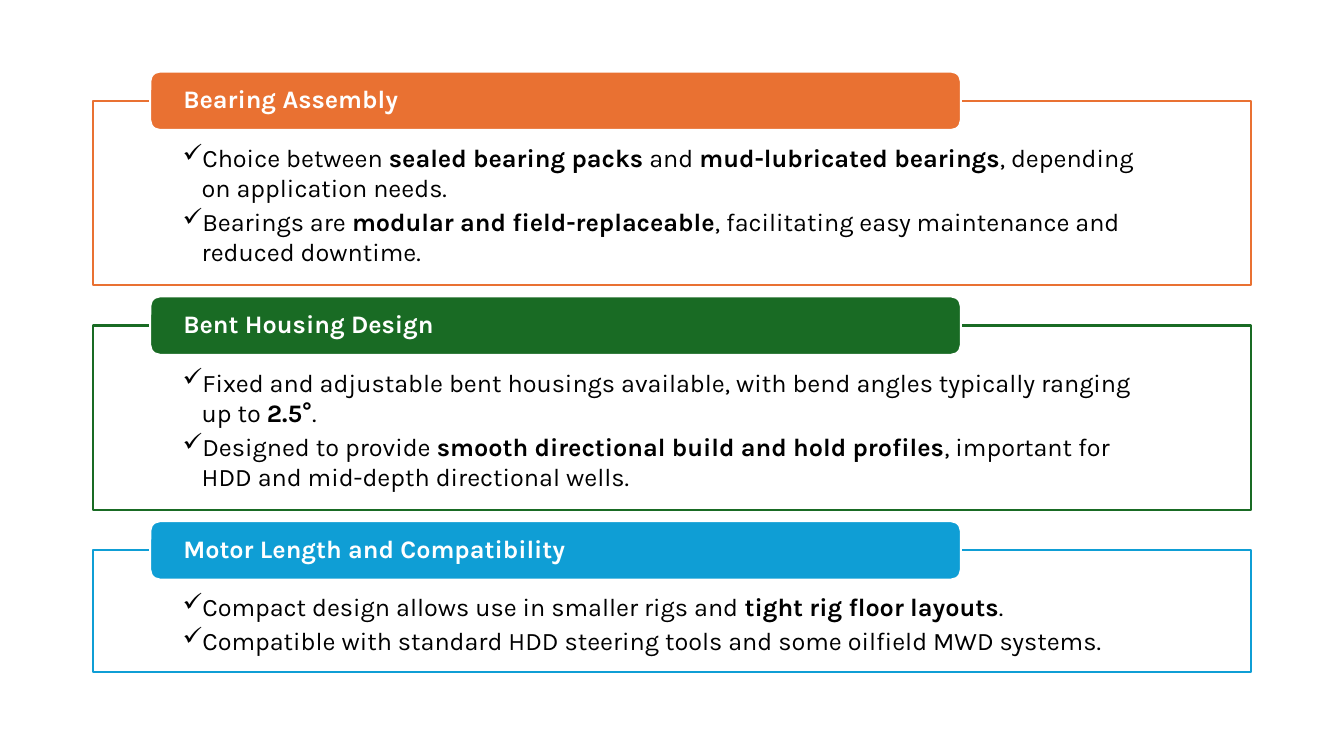
from pptx import Presentation
from pptx.dml.color import RGBColor as Rgb
from pptx.enum.shapes import MSO_SHAPE as Shape
from pptx.enum.text import MSO_ANCHOR as Anchor, PP_ALIGN as Align
from pptx.oxml.ns import qn
from pptx.util import Inches, Pt
from lxml.etree import SubElement as Sub

COLORS = {
    "white": "FFFFFF",
    "black": "000000",
    "orange": "E97132",
    "green": "196B24",
    "blue": "0F9ED5",
}

PANELS = [
    ("Bearing Assembly", "orange", 1.83, [
        "Choice between *sealed bearing packs* and *mud-lubricated bearings*, "
        "depending on application needs.",
        "Bearings are *modular and field-replaceable*, facilitating easy "
        "maintenance and reduced downtime.",
    ]),
    ("Bent Housing Design", "green", 1.83, [
        "Fixed and adjustable bent housings available, with bend angles "
        "typically ranging up to *2.5°*.",
        "Designed to provide *smooth directional build and hold profiles*, "
        "important for HDD and mid-depth directional wells.",
    ]),
    ("Motor Length and Compatibility", "blue", 1.21, [
        "Compact design allows use in smaller rigs and *tight rig floor layouts*.",
        "Compatible with standard HDD steering tools and some oilfield MWD systems.",
    ]),
]

TOP = 1
GAP = 0.4
TAB = 0.58


class Deck:
    face = "Karla"
    size = Pt(18)
    stroke = Pt(1.5)

    def __init__(self, slide):
        self.slide = slide

    def block(self, kind, area, fill, line, pads, anchor):
        shape = self.slide.shapes.add_shape(kind, *map(Inches, area))
        shape.shadow.inherit = False
        shape.fill.solid()
        shape.fill.fore_color.rgb = Rgb.from_string(COLORS[fill])
        shape.line.color.rgb = Rgb.from_string(COLORS[line])
        shape.line.width = self.stroke
        frame = shape.text_frame
        frame.word_wrap = True
        frame.vertical_anchor = anchor
        (frame.margin_left, frame.margin_top,
         frame.margin_right, frame.margin_bottom) = map(Inches, pads)
        return shape

    def style(self, para, color):
        para.alignment = Align.LEFT
        para.font.name = self.face
        para.font.size = self.size
        para.font.color.rgb = Rgb.from_string(COLORS[color])

    def bullet(self, para, text):
        props = para._p.get_or_add_pPr()
        props.set("marL", str(Inches(0.19)))
        props.set("indent", str(Inches(-0.19)))
        para.space_after = Pt(2.7)
        Sub(props, qn("a:buChar"), char="✓")
        self.style(para, "black")
        for i, part in enumerate(text.split("*")):
            run = para.add_run()
            run.text = part
            run.font.bold = i % 2 == 1

    def panel(self, top, height, color, items):
        box = self.block(Shape.RECTANGLE, (0.92, top, 11.49, height), "white",
                         color, (0.89, 0.41, 0.89, 0.14), Anchor.TOP)
        tint = box.fill._xPr.find(qn("a:solidFill"))[0]
        Sub(tint, qn("a:alpha"), val="90000")
        frame = box.text_frame
        for i, text in enumerate(items):
            para = frame.add_paragraph() if i else frame.paragraphs[0]
            self.bullet(para, text)

    def header(self, top, color, text):
        tab = self.block(Shape.ROUNDED_RECTANGLE, (1.49, top, 8.04, TAB), color,
                         "white", (0.3, 0, 0.3, 0), Anchor.MIDDLE)
        para = tab.text_frame.paragraphs[0]
        para.text = text
        para.line_spacing = 0.9
        self.style(para, "white")
        para.font.bold = True


def main():
    show = Presentation()
    show.slide_width = Inches(13.33)
    show.slide_height = Inches(7.5)
    deck = Deck(show.slides.add_slide(show.slide_layouts[6]))
    top = TOP
    for title, color, height, items in PANELS:
        deck.panel(top, height, color, items)
        deck.header(top - TAB / 2, color, title)
        top += height + GAP
    show.save("out.pptx")


if __name__ == "__main__":
    main()
